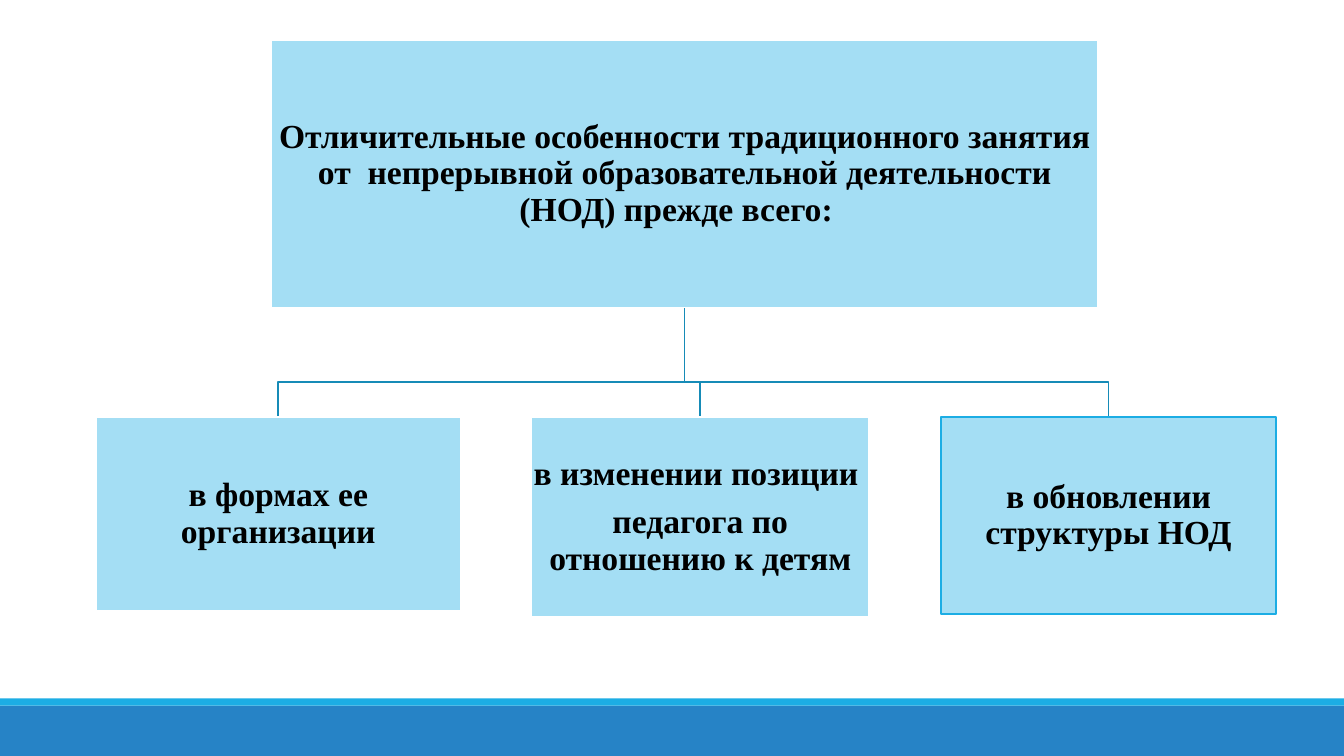
import pptx
import pptx.util
import pptx.dml.color
import pptx.enum.shapes
import pptx.enum.text

Inches = pptx.util.Inches
RGBColor = pptx.dml.color.RGBColor
RECTANGLE = pptx.enum.shapes.MSO_SHAPE.RECTANGLE

BLACK = RGBColor(0x00, 0x00, 0x00)
WHITE = RGBColor(0xFF, 0xFF, 0xFF)
PALE_BLUE = RGBColor(0xA4, 0xDE, 0xF4)
BRIGHT_BLUE = RGBColor(0x1C, 0xAD, 0xE4)
DEEP_BLUE = RGBColor(0x26, 0x83, 0xC6)
BRANCH_BLUE = RGBColor(0x16, 0x8B, 0xB7)
LINE_WIDTH = pptx.util.Pt(1.25)


def write_box(box, text, border=WHITE, size=24, font="Times New Roman"):
    box.fill.solid()
    box.fill.fore_color.rgb = PALE_BLUE
    box.line.color.rgb = border
    box.line.width = LINE_WIDTH
    frame = box.text_frame
    frame.text = text
    frame.word_wrap = True
    frame.auto_size = pptx.enum.text.MSO_AUTO_SIZE.NONE
    frame.vertical_anchor = pptx.enum.text.MSO_ANCHOR.MIDDLE
    frame.margin_left = frame.margin_right = Inches(0.02)
    frame.margin_top = frame.margin_bottom = Inches(0.02)
    for paragraph in frame.paragraphs:
        paragraph.alignment = pptx.enum.text.PP_ALIGN.CENTER
        paragraph.line_spacing = 0.9
        paragraph.space_before = pptx.util.Pt(0)
        paragraph.space_after = pptx.util.Pt(size * 0.35)
        for run in paragraph.runs:
            run.font.name = font
            run.font.size = pptx.util.Pt(size)
            run.font.bold = True
            run.font.color.rgb = BLACK


deck = pptx.Presentation()
deck.slide_width = Inches(13.33)
deck.slide_height = Inches(7.5)
slide = deck.slides.add_slide(deck.slide_layouts[5])

# Bands along the bottom edge
for top, height, color in [(7, 0.5, DEEP_BLUE), (6.93, 0.07, BRIGHT_BLUE)]:
    band = slide.shapes.add_shape(
        RECTANGLE, 0, Inches(top), deck.slide_width, Inches(height))
    band.shadow.inherit = False
    band.fill.solid()
    band.fill.fore_color.rgb = color
    band.line.fill.background()

# Heading at the root of the tree
heading = slide.shapes.title
heading.left, heading.top = Inches(2.69), Inches(0.4)
heading.width, heading.height = Inches(8.2), Inches(2.65)
write_box(heading, "Отличительные особенности традиционного занятия от  "
                   "непрерывной образовательной деятельности (НОД) "
                   "прежде всего:  ")

# Features, each with its branch from the heading
ROOT_X, ROOT_Y, FORK_Y, FEATURE_Y = 6.79, 3.06, 3.79, 4.14
features = [
    (9.33, 3.33, 1.95, "в обновлении структуры НОД", BRIGHT_BLUE),
    (5.27, 3.35, 1.98,
     "в изменении позиции \nпедагога по отношению к детям", WHITE),
    (0.95, 3.62, 1.92, "в формах ее организации", WHITE),
]
for left, width, height, text, border in features:
    middle = left + width / 2
    outline = slide.shapes.build_freeform(Inches(ROOT_X), Inches(ROOT_Y))
    outline.add_line_segments(
        [(Inches(x), Inches(y)) for x, y in
         [(ROOT_X, FORK_Y), (middle, FORK_Y), (middle, FEATURE_Y)]],
        close=False)
    branch = outline.convert_to_shape()
    branch.shadow.inherit = False
    branch.fill.background()
    branch.line.color.rgb = BRANCH_BLUE
    branch.line.width = LINE_WIDTH

    feature = slide.shapes.add_shape(
        RECTANGLE, Inches(left), Inches(FEATURE_Y),
        Inches(width), Inches(height))
    feature.shadow.inherit = False
    write_box(feature, text, border=border)

deck.save("out.pptx")
